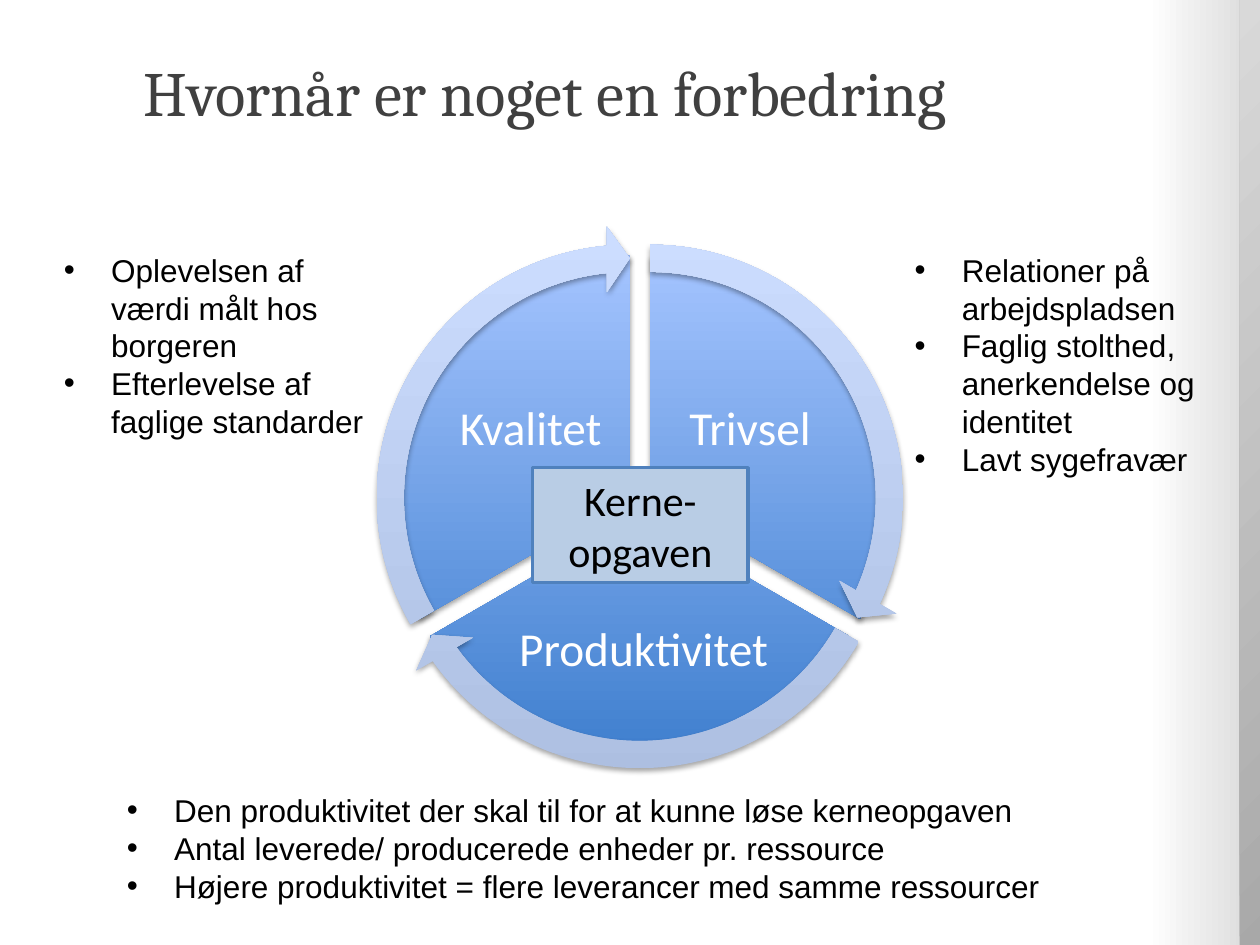
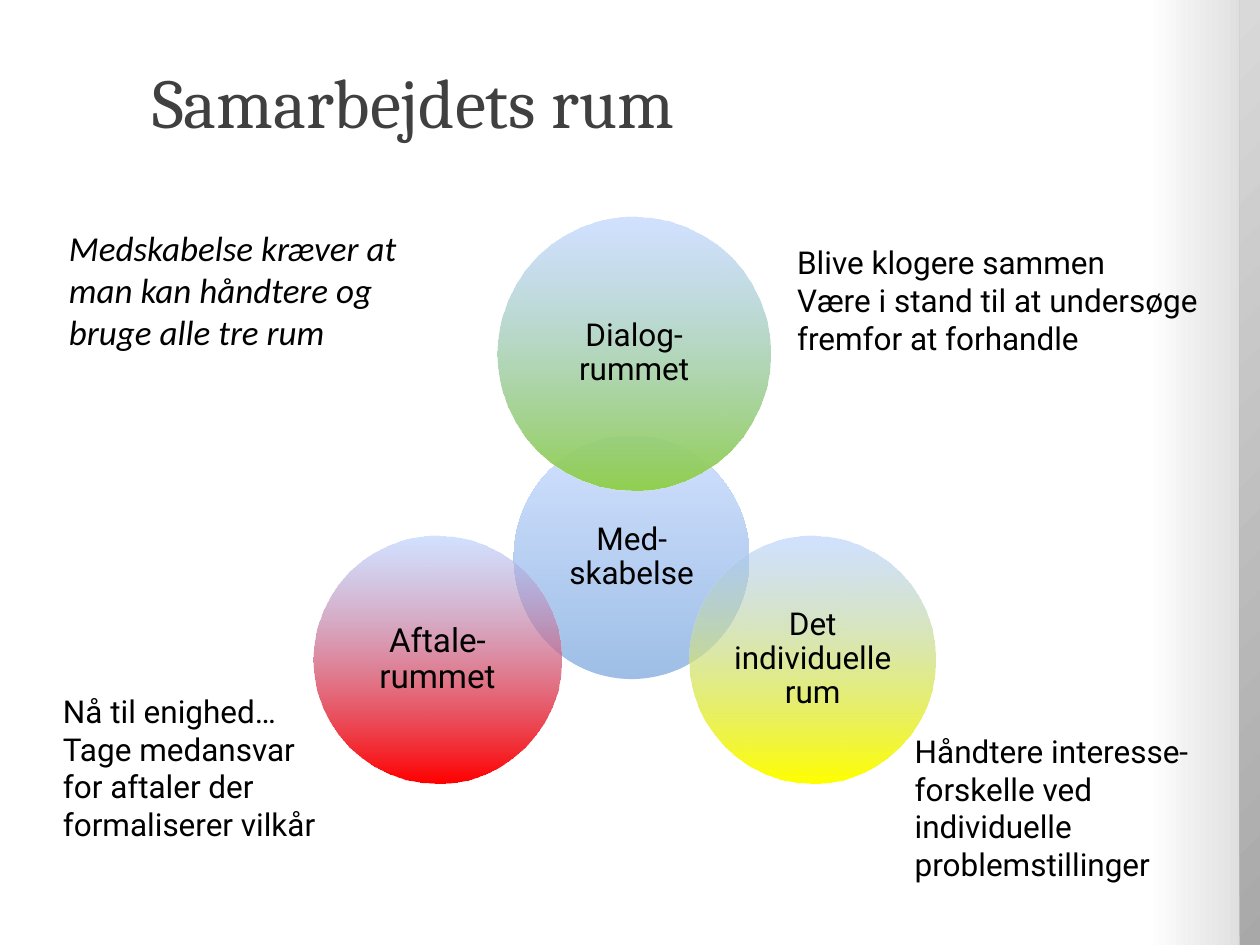
import pptx
import pptx.util
import pptx.dml.color
import pptx.enum.shapes
import pptx.enum.text
import pptx.oxml.ns
import lxml.etree
from dataclasses import dataclass

Cm = pptx.util.Cm
Pt = pptx.util.Pt
qn = pptx.oxml.ns.qn
KIND = pptx.enum.shapes.MSO_SHAPE
MID = pptx.enum.text.MSO_ANCHOR.MIDDLE
LEFT = pptx.enum.text.PP_ALIGN.LEFT
CENTER = pptx.enum.text.PP_ALIGN.CENTER


@dataclass(frozen=True)
class Theme:
    """Colours, gradients, fonts and type sizes."""
    ink: str = "000000"
    white: str = "FFFFFF"
    title: str = "404040"
    core: str = "B9CDE5"
    edge: str = "4F81BD"
    light: str = "A4C4FF"
    blue: str = "3F7FCE"
    green: str = "92D050"
    yellow: str = "FFFF00"
    red: str = "FF0000"
    page: tuple = ((91, "FFFFFF", 100), (100, "D9D9D9", 50))
    band: tuple = ((0, "D9D9D9", 100), (100, "A6A6A6", 100))
    wedge: tuple = ((0, "3F7FCE", 100), (100, "A4C4FF", 100))
    arrow: tuple = ((0, "ADBFE1", 100), (100, "CCDDFF", 100))
    head: str = "Cambria"
    label: str = "Calibri"
    bullet: str = "Arial"
    note: str = "Roboto"
    body: int = 18
    quote: int = 20
    big: int = 24
    huge: int = 27


T = Theme()


def put(item, values):
    """Set each named attribute on an item."""
    for name, value in values.items():
        setattr(item, name, value)


def sub(parent, tag, **attrs):
    """Append an element with the given attributes."""
    node = lxml.etree.SubElement(parent, qn(tag))
    for name, value in attrs.items():
        node.set(name, str(value))
    return node


def tint(parent, color, alpha):
    """Append a colour with its opacity in percent."""
    node = sub(parent, "a:srgbClr", val=color)
    if alpha < 100:
        sub(node, "a:alpha", val=alpha * 1000)


def blend(fill, owner, stops, angle=270):
    """Fill with a gradient, radial from the top left if angle is None."""
    fill.gradient()
    node = owner.element.find(".//" + qn("a:gradFill"))
    for child in list(node):
        node.remove(child)
    row = sub(node, "a:gsLst")
    for place, color, alpha in stops:
        tint(sub(row, "a:gs", pos=place * 1000), color, alpha)
    if angle is None:
        way = sub(node, "a:path", path="circle")
        sub(way, "a:fillToRect", r=100000, b=100000)
    else:
        sub(node, "a:lin", ang=angle * 60000, scaled=0)


def shift(box, x, y, wide, high):
    """Return a box placed relative to another one."""
    return box[0] + x, box[1] + y, wide, high


def shape(slide, kind, box, stops=None, angle=270, shade=False, turns=()):
    """Draw a preset shape without a line."""
    item = slide.shapes.add_shape(kind, *map(Cm, box))
    item.shadow.inherit = False
    item.line.fill.background()
    for spot, turn in enumerate(turns):
        item.adjustments[spot] = turn
    if stops:
        blend(item.fill, item, stops, angle)
    if shade:
        holder = item.element.spPr.find(qn("a:effectLst"))
        glow = sub(holder, "a:outerShdw", blurRad=Pt(3.1), dist=Pt(1.8),
                   dir=5400000, rotWithShape=0)
        tint(glow, T.ink, 35)
    return item


def write(item, lines, face, size, color=T.ink, align=LEFT, dots=False,
          inset=None, space=None, anchor=None, slant=None):
    """Fill a shape or box with formatted paragraphs."""
    frame = item.text_frame
    put(frame, {"word_wrap": True, "vertical_anchor": anchor})
    if inset is not None:
        sides = ("left", "top", "right", "bottom")
        put(frame, {f"margin_{side}": Cm(inset) for side in sides})
    for spot, line in enumerate(lines):
        para = frame.add_paragraph() if spot else frame.paragraphs[0]
        put(para, {"alignment": align, "line_spacing": space})
        if dots:
            props = para._p.get_or_add_pPr()
            props.set("marL", str(Cm(0.95)))
            props.set("indent", str(-Cm(0.95)))
            sub(props, "a:buFont", typeface=T.bullet)
            sub(props, "a:buChar", char="•")
        run = para.add_run()
        run.text = line
        put(run.font, {"name": face, "size": Pt(size), "italic": slant})
        run.font.color.rgb = pptx.dml.color.RGBColor.from_string(color)


def text(slide, box, lines, face, size, **style):
    """Add a text box."""
    write(slide.shapes.add_textbox(*map(Cm, box)), lines, face, size, **style)


def base(deck, title, box, size):
    """Add a slide with its backdrop, side band and title."""
    slide = deck.slides.add_slide(deck.slide_layouts[6])
    blend(slide.background.fill, slide, T.page, 0)
    shape(slide, KIND.RECTANGLE, (24.99, 0, 1.09, 19.43), T.band, None)
    text(slide, box, [title], T.head, size, color=T.title, anchor=MID)
    return slide


def wheel(slide, box):
    """Draw three slices, their arrows and the core inside a box."""
    rim, size = 0.6, box[2]
    thirds = (
        ("Trivsel", (0.41, 0), (162, 18), (14.725, 161.994),
         (6.17, 2.67, 3.48, 2.92)),
        ("Produktivitet", (0.2, 0.35), (18, 90), (86.72, 18.005),
         (3.15, 7.29, 5.23, 2.57)),
        ("Kvalitet", (0, 0), (90, 162), (158.73, 90),
         (1.75, 2.67, 3.48, 2.92)),
    )
    for name, (x, y), turns, _, spot in thirds:
        side = size - 2 * rim
        shape(slide, KIND.PIE, shift(box, x + rim, y + rim, side, side),
              T.wedge, shade=True, turns=turns)
        text(slide, shift(box, *spot), [name], T.label, T.huge, color=T.white,
             align=CENTER, inset=0.1, space=0.9, anchor=MID)
    for _, (x, y), _, (end, start), _ in thirds:
        shape(slide, KIND.CIRCULAR_ARROW, shift(box, x, y, size, size),
              T.arrow, shade=True, turns=(0.05, 3.28, end, start, 0.06))
    core = shape(slide, KIND.RECTANGLE, shift(box, 3.53, 4.88, 4.34, 2.31))
    core.fill.solid()
    core.line.fill.solid()
    for fill, color in ((core.fill, T.core), (core.line.fill, T.edge)):
        fill.fore_color.rgb = pptx.dml.color.RGBColor.from_string(color)
    core.line.width = Pt(2)
    write(core, ["Kerne-opgaven"], T.label, T.big, align=CENTER, anchor=MID)


def rooms(slide, box):
    """Draw the overlapping circles inside a box."""
    discs = (
        ("Med-skabelse", (4.04, 4.42, 4.75, 4.9), T.blue, 50, T.body),
        ("Dialog-rummet", (3.71, 0, 5.51, 5.51), T.green, 100, T.body),
        ("Det individuelle rum", (7.59, 6.43, 4.95, 5), T.yellow, 100, T.body),
        ("Aftale-rummet", (0, 6.43, 5, 5), T.red, 100, T.body + 1),
    )
    for name, spot, color, alpha, size in discs:
        disc = shape(slide, KIND.OVAL, shift(box, *spot),
                     ((0, color, alpha), (100, T.light, 50)))
        write(disc, [name], T.note, size, align=CENTER, inset=0.08,
              space=0.9, anchor=MID)


def better(deck):
    """Build the slide on what counts as an improvement."""
    slide = base(deck, "Hvornår er noget en forbedring",
                 (2.64, 0.25, 20.09, 3.18), 36)
    wheel(slide, (7.21, 4.55, 10.97, 10.97))
    lists = (
        ((2.31, 15.82, 21.95, 2.57),
         ["Den produktivitet der skal til for at kunne løse kerneopgaven",
          "Antal leverede/ producerede enheder pr. ressource",
          "Højere produktivitet = flere leverancer med samme ressourcer"]),
        ((1.04, 4.93, 6.91, 4.11),
         ["Oplevelsen af værdi målt hos borgeren",
          "Efterlevelse af faglige standarder"]),
        ((18.19, 4.93, 6.25, 4.88),
         ["Relationer på arbejdspladsen",
          "Faglig stolthed, anerkendelse og identitet",
          "Lavt sygefravær"]),
    )
    for box, lines in lists:
        text(slide, box, lines, T.bullet, T.body, dots=True)


def shared(deck):
    """Build the slide on the rooms of working together."""
    slide = base(deck, "Samarbejdets rum", (2.82, 0.43, 21.31, 3.18), 40)
    rooms(slide, (6.32, 4.37, 12.54, 11.43))
    notes = (
        ((15.82, 4.78, 8.59, 3.33),
         ["Blive klogere sammen",
          "Være i stand til at undersøge fremfor at forhandle"]),
        ((18.19, 14.63, 6.48, 3.33),
         ["Håndtere interesse-forskelle ved individuelle problemstillinger"]),
        ((1.02, 13.82, 6.02, 3.33),
         ["Nå til enighed…",
          "Tage medansvar for aftaler der formaliserer vilkår"]),
    )
    for box, lines in notes:
        text(slide, box, lines, T.note, T.body)
    text(slide, (1.14, 4.45, 8.2, 2.82),
         ["Medskabelse kræver at man kan håndtere og bruge alle tre rum"],
         T.label, T.quote, slant=True)


def main():
    """Build and save the deck."""
    deck = pptx.Presentation()
    put(deck, {"slide_width": Cm(25.4), "slide_height": Cm(19.05)})
    better(deck)
    shared(deck)
    deck.save("out.pptx")


if __name__ == "__main__":
    main()
